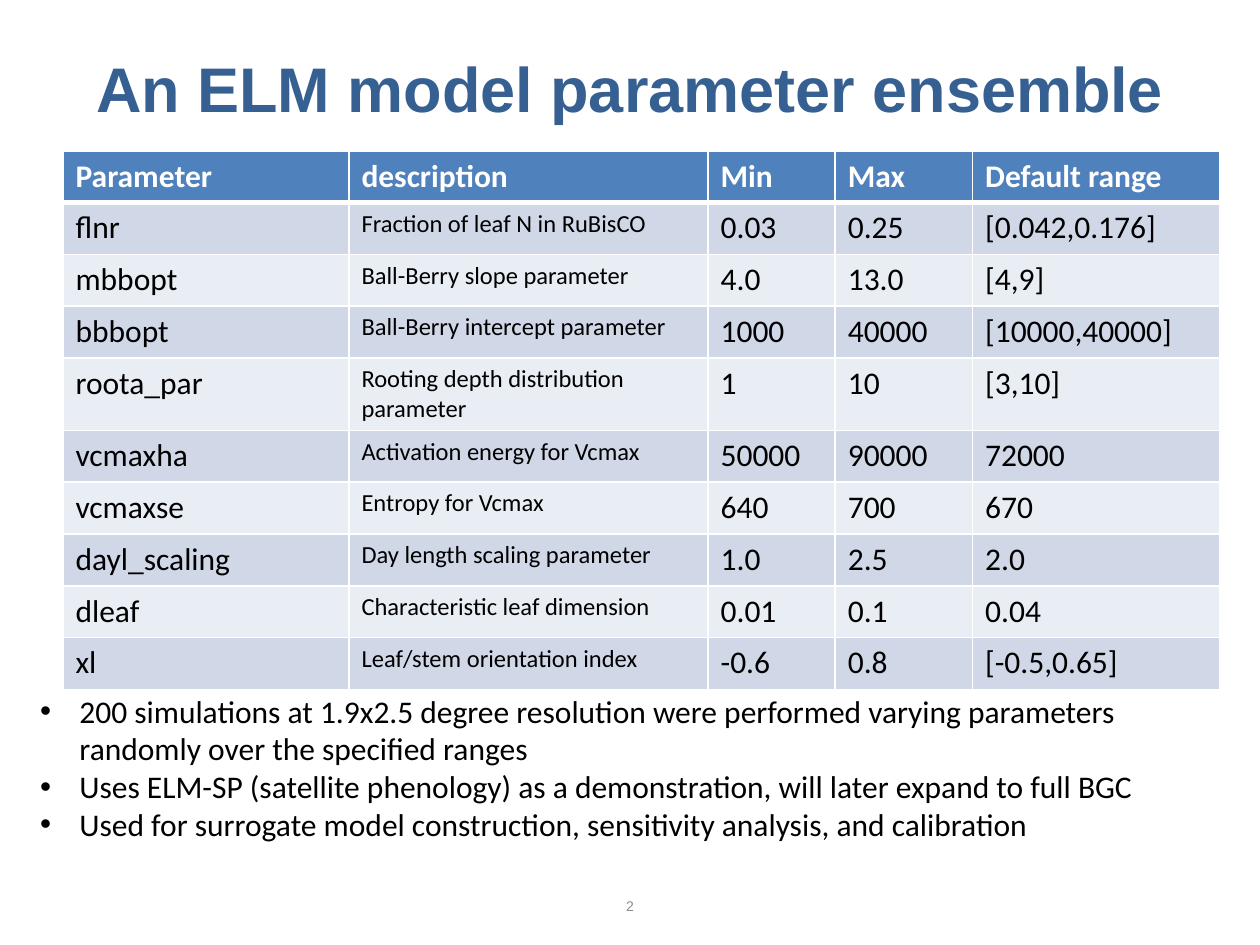
import pptx
import pptx.util
import pptx.dml.color
import pptx.enum.text
import pptx.oxml
import pptx.oxml.ns

Pt = pptx.util.Pt
RGB = pptx.dml.color.RGBColor
Align = pptx.enum.text.PP_ALIGN
Anchor = pptx.enum.text.MSO_ANCHOR

NAVY = RGB(0x37, 0x60, 0x92)
BLUE = RGB(0x4F, 0x81, 0xBD)
DARK = RGB(0xD0, 0xD8, 0xE8)
LIGHT = RGB(0xE9, 0xED, 0xF4)
GRAY = RGB(0x8C, 0x8C, 0x8C)
BLACK = RGB(0, 0, 0)
WHITE = RGB(255, 255, 255)
NS = pptx.oxml.ns.nsdecls("a")


def write(frame, *lines, size=18, font="Calibri", color=BLACK, bold=False,
          align=None, anchor=None, inset=None, bullet=False):
    """Fill a text frame with one paragraph per line."""
    frame.word_wrap = True
    if anchor is not None:
        frame.vertical_anchor = anchor
    if inset is not None:
        frame.margin_left = frame.margin_right = Pt(inset)
        frame.margin_top = frame.margin_bottom = Pt(inset)
    for i, line in enumerate(lines):
        para = frame.paragraphs[0] if i == 0 else frame.add_paragraph()
        if align is not None:
            para.alignment = align
        if bullet:
            props = para._p.get_or_add_pPr()
            props.set("marL", str(Pt(22.5)))
            props.set("indent", str(Pt(-22.5)))
            for tag in ('buFont typeface="Arial"', 'buChar char="•"'):
                props.append(pptx.oxml.parse_xml(f"<a:{tag} {NS}/>"))
        run = para.add_run()
        run.text = line
        run.font.size = Pt(size)
        run.font.name = font
        run.font.bold = bold
        run.font.color.rgb = color


def edge(cell, widths):
    """Draw white borders: left, right, top, bottom widths in points."""
    props = cell._tc.get_or_add_tcPr()
    for i, (side, width) in enumerate(zip("LRTB", widths)):
        props.insert(i, pptx.oxml.parse_xml(
            f'<a:ln{side} {NS} w="{Pt(width)}"><a:solidFill>'
            f'<a:srgbClr val="{WHITE}"/></a:solidFill></a:ln{side}>'))


deck = pptx.Presentation()
deck.slide_width, deck.slide_height = Pt(720), Pt(540)
slide = deck.slides.add_slide(deck.slide_layouts[5])

# Title
title = slide.shapes.title
title.left, title.top, title.width, title.height = Pt(36), Pt(21.6), Pt(648), Pt(49.7)
write(title.text_frame, "An ELM model parameter ensemble", size=36, font="Arial",
      color=NAVY, bold=True, align=Align.CENTER, anchor=Anchor.BOTTOM, inset=0)

# Parameter table
rows = [
    ("Parameter", "description", "Min", "Max", "Default range"),
    ("flnr", "Fraction of leaf N in RuBisCO", "0.03", "0.25", "[0.042,0.176]"),
    ("mbbopt", "Ball-Berry slope parameter", "4.0", "13.0", "[4,9]"),
    ("bbbopt", "Ball-Berry intercept parameter", "1000", "40000", "[10000,40000]"),
    ("roota_par", "Rooting depth distribution parameter", "1", "10", "[3,10]"),
    ("vcmaxha", "Activation energy for Vcmax", "50000", "90000", "72000"),
    ("vcmaxse", "Entropy for Vcmax", "640", "700", "670"),
    ("dayl_scaling", "Day length scaling parameter", "1.0", "2.5", "2.0"),
    ("dleaf", "Characteristic leaf dimension", "0.01", "0.1", "0.04"),
    ("xl", "Leaf/stem orientation index", "-0.6", "0.8", "[-0.5,0.65]"),
]
widths = [163.4, 205.2, 72.7, 78.5, 141.1]
heights = [28.8] + [29.6] * 3 + [41.4] + [29.6] * 5
grid = slide.shapes.add_table(len(rows), len(widths), Pt(36), Pt(86.6),
                              Pt(sum(widths)), Pt(sum(heights))).table
for col, width in zip(grid.columns, widths):
    col.width = Pt(width)
for r, row in enumerate(rows):
    grid.rows[r].height = Pt(heights[r])
    head = r == 0
    for c, text in enumerate(row):
        cell = grid.cell(r, c)
        cell.fill.solid()
        cell.fill.fore_color.rgb = BLUE if head else DARK if r % 2 else LIGHT
        edge(cell, (1, 1, 3 if r == 1 else 1, 3 if head else 1))
        write(cell.text_frame, text, size=14 if c == 1 and not head else 18,
              color=WHITE if head else BLACK, bold=head)

# Notes under the table
notes = slide.shapes.add_textbox(Pt(15.8), Pt(391.7), Pt(687.6), Pt(94.3))
write(notes.text_frame,
      "200 simulations at 1.9x2.5 degree resolution were performed varying "
      "parameters randomly over the specified ranges",
      "Uses ELM-SP (satellite phenology) as a demonstration, will later expand to full BGC",
      "Used for surrogate model construction, sensitivity analysis, and calibration",
      bullet=True)

# Page number
page = slide.shapes.add_textbox(Pt(306), Pt(511.9), Pt(108), Pt(10.8))
write(page.text_frame, "2", size=8, font="Arial", color=GRAY,
      align=Align.CENTER, anchor=Anchor.BOTTOM, inset=0)

deck.save("out.pptx")
